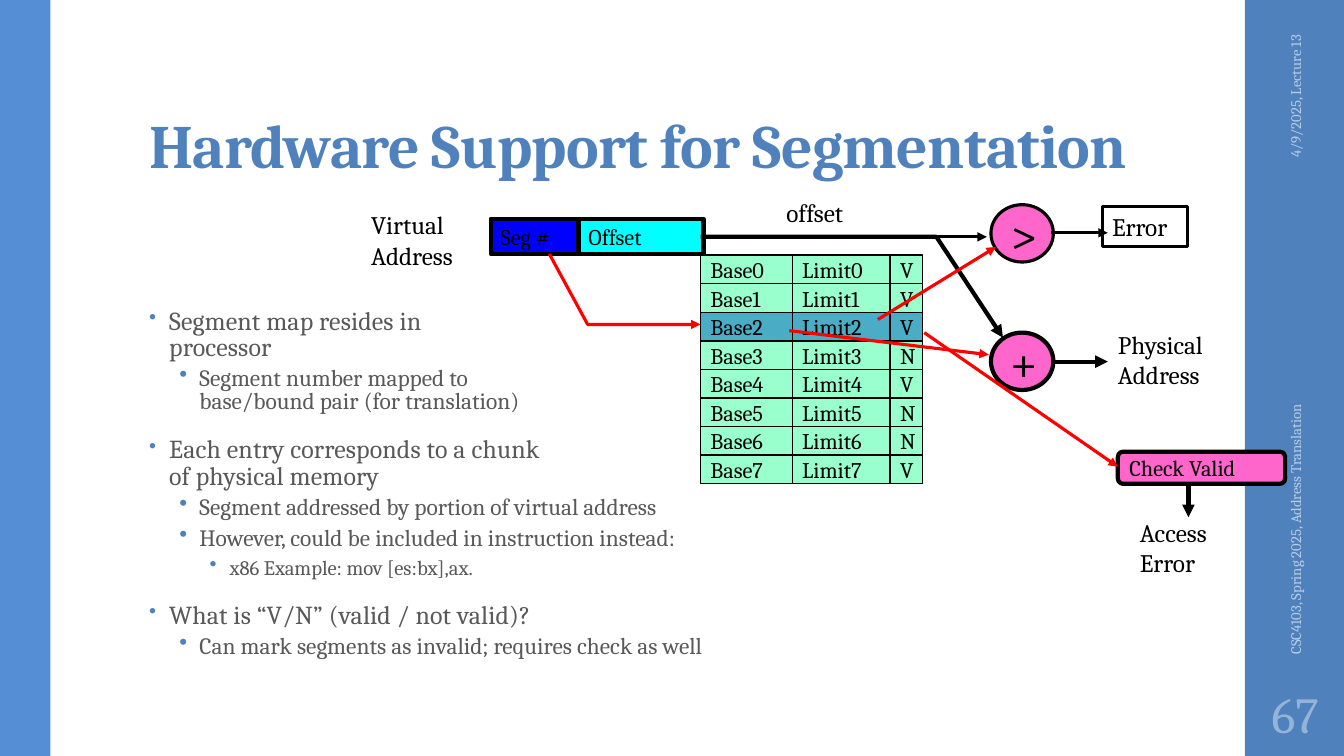
"""Build the slide on hardware support for segmentation."""
from pptx import Presentation
from pptx.dml.color import RGBColor
from pptx.enum import shapes, text
from pptx.oxml import xmlchemy
from pptx.util import Pt

FONT = "Cambria"
BLACK = RGBColor(0x00, 0x00, 0x00)
RED = RGBColor(0xFF, 0x00, 0x00)
PINK = RGBColor(0xFF, 0x66, 0xCC)
CYAN = RGBColor(0x00, 0xFF, 0xFF)
BLUE = RGBColor(0x00, 0x00, 0xFF)
MINT = RGBColor(0x99, 0xFF, 0xCC)
TEAL = RGBColor(0x4B, 0xAC, 0xC6)
ACCENT = RGBColor(0x4F, 0x81, 0xBD)
LEFT_BAND = RGBColor(0x55, 0x8E, 0xD5)
FOOTER = RGBColor(0xB9, 0xCD, 0xE5)
NUMBER = RGBColor(0x95, 0xB3, 0xD7)
GREY = RGBColor(0x59, 0x59, 0x59)
KIND = shapes.MSO_SHAPE
ALIGN = text.PP_ALIGN
ANCHOR = text.MSO_ANCHOR


def write(frame, lines, size, color=BLACK, align=ALIGN.LEFT, anchor=ANCHOR.MIDDLE):
    frame.vertical_anchor = anchor
    for index, line in enumerate(lines):
        para = frame.add_paragraph() if index else frame.paragraphs[0]
        para.alignment = align
        span = para.add_run()
        span.text = line
        span.font.name = FONT
        span.font.size = Pt(size)
        span.font.color.rgb = color


def make_arrow(line_shape, color, width):
    line_shape.line.color.rgb = color
    line_shape.line.width = Pt(width)
    head = xmlchemy.OxmlElement("a:tailEnd")
    head.set("type", "triangle")
    line_shape.line._get_or_add_ln().append(head)
    line_shape._element.spPr.append(xmlchemy.OxmlElement("a:effectLst"))


deck = Presentation()
deck.slide_width, deck.slide_height = Pt(960), Pt(540)
page = deck.slides.add_slide(deck.slide_layouts[5])

for left, width, color in [(889.2, 70.8, ACCENT), (0, 36, LEFT_BAND)]:
    band = page.shapes.add_shape(KIND.RECTANGLE, Pt(left), 0, Pt(width), Pt(540))
    band.shadow.inherit = False
    band.fill.solid()
    band.fill.fore_color.rgb = color
    band.line.fill.background()

title = page.shapes.title
title.left, title.top, title.width, title.height = Pt(99.4), Pt(23), Pt(763), Pt(110.2)
title.text_frame.margin_top = Pt(2.2)
write(title.text_frame, ["Hardware Support for Segmentation"], 44, ACCENT, anchor=ANCHOR.BOTTOM)
heading = title.text_frame.paragraphs[0]
heading.line_spacing = 0.9
heading.runs[0].font.bold = True
heading.runs[0]._r.get_or_add_rPr().set("spc", "-50")

LEVELS = [
    dict(size=18.5, indent=14.4, spacing=0.85, before=14, after=2, bullet=80),
    dict(size=16.7, indent=36, spacing=0.8, before=3, after=3, bullet=100),
    dict(size=14.8, indent=57.6, spacing=0.8, before=3, after=3, bullet=100),
]
POINTS = [
    (0, ["Segment map resides in", "processor"]),
    (1, ["Segment number mapped to", "base/bound pair (for translation)"]),
    (0, ["Each entry corresponds to a chunk", "of physical memory"]),
    (1, ["Segment addressed by portion of virtual address"]),
    (1, ["However, could be included in instruction instead:"]),
    (2, ["x86 Example: mov [es:bx],ax."]),
    (0, ["What is “V/N” (valid / not valid)?"]),
    (1, ["Can mark segments as invalid; requires check as well"]),
]
body = page.shapes.add_textbox(Pt(99.4), Pt(217.2), Pt(602.6), Pt(269)).text_frame
body.word_wrap = True
for index, (level, lines) in enumerate(POINTS):
    style = LEVELS[level]
    para = body.add_paragraph() if index else body.paragraphs[0]
    para.level = level
    para.line_spacing = style["spacing"]
    para.space_before = Pt(style["before"] if index else 0)
    para.space_after = Pt(style["after"])
    for number, line in enumerate(lines):
        if number:
            para.add_line_break()
        span = para.add_run()
        span.text = line
        span.font.name = FONT
        span.font.size = Pt(style["size"])
        span.font.color.rgb = GREY
        if level == 0:
            span._r.get_or_add_rPr().set("spc", "10")
    settings = para._p.get_or_add_pPr()
    settings.set("marL", str(Pt(style["indent"])))
    settings.set("indent", str(Pt(-14.4)))
    bullet_color = xmlchemy.OxmlElement("a:buClr")
    rgb = xmlchemy.OxmlElement("a:srgbClr")
    rgb.set("val", str(ACCENT))
    bullet_color.append(rgb)
    bullet_size = xmlchemy.OxmlElement("a:buSzPct")
    bullet_size.set("val", str(style["bullet"] * 1000))
    bullet = xmlchemy.OxmlElement("a:buChar")
    bullet.set("char", "•")
    settings.extend([bullet_color, bullet_size, bullet])

LABELS = [
    (850.3, 78.5, 149.8, 28.8, 270, ["4/9/2025, Lecture 13"], 10.5, FOOTER, ALIGN.RIGHT, ANCHOR.MIDDLE),
    (784.1, 319, 282.2, 28.8, 270, ["CSC4103, Spring 2025, Address Translation"], 10.5, FOOTER,
     ALIGN.LEFT, ANCHOR.MIDDLE),
    (889.2, 486, 72, 46.8, 0, ["67"], 36, NUMBER, ALIGN.CENTER, ANCHOR.MIDDLE),
    (258, 146.2, 82.8, 50.4, 0, ["Virtual", "Address"], 18, BLACK, ALIGN.LEFT, ANCHOR.TOP),
    (791.5, 231.8, 96.5, 50.4, 0, ["Physical", "Address"], 18, BLACK, ALIGN.LEFT, ANCHOR.TOP),
    (554.6, 137.2, 60.5, 28.8, 0, ["offset"], 18, BLACK, ALIGN.LEFT, ANCHOR.TOP),
    (807.1, 366, 69.8, 50.4, 0, ["Access", "Error"], 18, BLACK, ALIGN.LEFT, ANCHOR.TOP),
]
for left, top, width, height, turn, lines, size, color, align, anchor in LABELS:
    label = page.shapes.add_textbox(Pt(left), Pt(top), Pt(width), Pt(height))
    label.rotation = turn
    label.text_frame.word_wrap = True
    write(label.text_frame, lines, size, color, align, anchor)

ROUTES = [
    ([(500.4, 169.2), (668.9, 169.2), (716.4, 241.2)], BLACK, 3),
    ([(392.4, 181.4), (419.8, 231.8), (500.4, 231.8)], RED, 2.25),
]
BOXES = [
    (KIND.RECTANGLE, 413.3, 156.2, 89.3, 25.2, CYAN, 3, "Offset", 16),
    (KIND.RECTANGLE, 350.6, 156.2, 62.6, 25.2, BLUE, 3, "Seg #", 16),
    (KIND.OVAL, 707.8, 237.6, 44.6, 41, PINK, 3, "+", 36),
    (KIND.OVAL, 707.8, 146.2, 44.6, 41, PINK, 2.25, ">", 36),
    (KIND.RECTANGLE, 787.2, 147.6, 61.2, 28.8, None, 2.25, "Error", 18),
    (KIND.ROUNDED_RECTANGLE, 798.5, 322.6, 119.5, 23, PINK, 3, "Check Valid", 16),
]
ROW_HEIGHT = 20.4
for row, flag in enumerate("VVVNVNNV"):
    entry = [(500.4, 65.5, f"Base{row}"), (565.9, 69.9, f"Limit{row}"), (635.8, 23.2, flag)]
    for left, width, value in entry:
        BOXES.append((KIND.RECTANGLE, left, 182.3 + row * ROW_HEIGHT, width, ROW_HEIGHT,
                      TEAL if row == 2 else MINT, 1, value, 16))
for kind, left, top, width, height, color, weight, caption, size in BOXES:
    box = page.shapes.add_shape(kind, Pt(left), Pt(top), Pt(width), Pt(height))
    box.shadow.inherit = False
    if color is None:
        box.fill.background()
    else:
        box.fill.solid()
        box.fill.fore_color.rgb = color
    box.line.color.rgb = BLACK
    box.line.width = Pt(weight)
    box.text_frame.word_wrap = False
    write(box.text_frame, [caption], size)

for (start, *rest), color, width in ROUTES:
    builder = page.shapes.build_freeform(Pt(start[0]), Pt(start[1]))
    builder.add_line_segments([(Pt(x), Pt(y)) for x, y in rest], close=False)
    route = builder.convert_to_shape()
    route.fill.background()
    make_arrow(route, color, width)

ARROWS = [
    (563.8, 236.2, 706.3, 253.4, RED, 2.25),
    (751, 258.3, 791.3, 258.3, BLACK, 3),
    (627.1, 228.2, 711.4, 176.4, RED, 2.25),
    (751, 166.3, 791.3, 166.3, BLACK, 2.25),
    (668.9, 169.2, 704.9, 169.2, BLACK, 2.25),
    (660.2, 237.6, 798.5, 333.4, RED, 2.25),
    (848.9, 344.2, 848.9, 369.4, BLACK, 3),
]
for x1, y1, x2, y2, color, width in ARROWS:
    arrow = page.shapes.add_connector(
        shapes.MSO_CONNECTOR.STRAIGHT, Pt(x1), Pt(y1), Pt(x2), Pt(y2))
    make_arrow(arrow, color, width)

deck.save("out.pptx")
